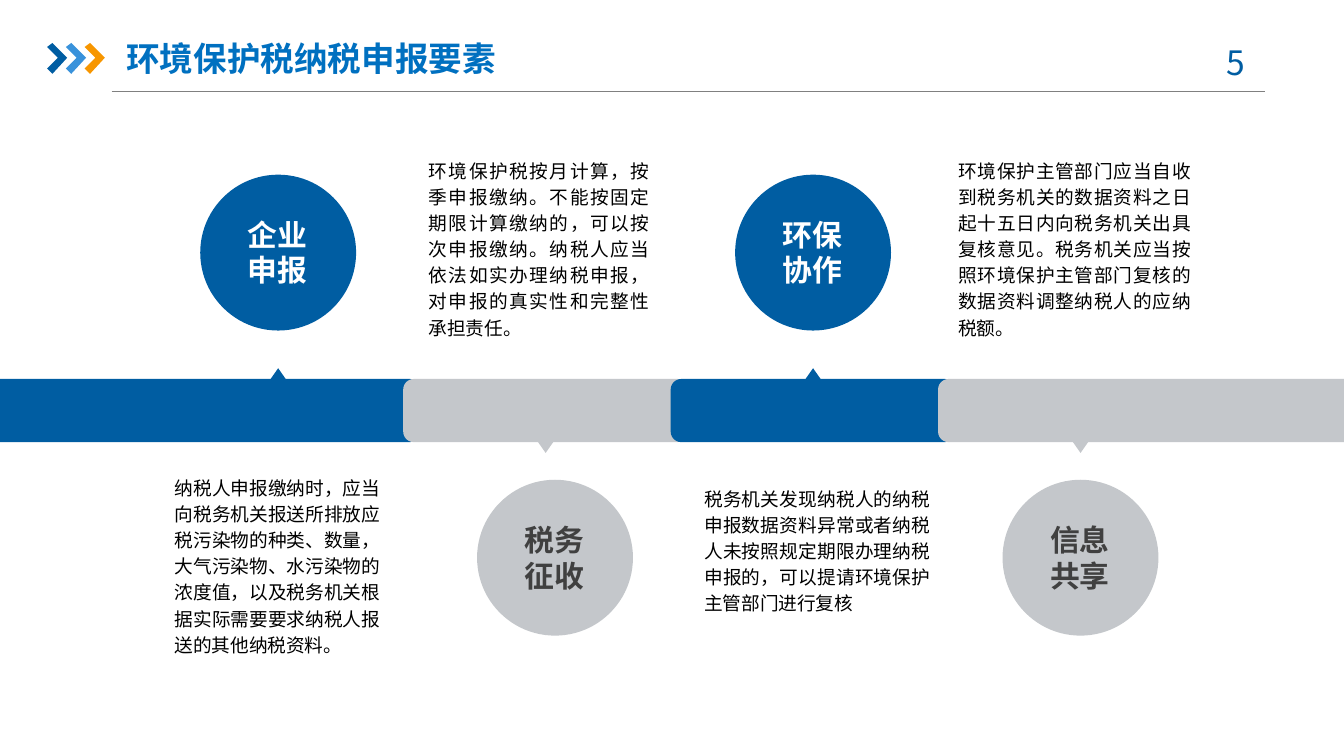
from lxml import etree
from pptx import Presentation
from pptx import util as u
from pptx.dml.color import RGBColor
from pptx.enum import shapes, text
from pptx.oxml.ns import qn

BLUE = RGBColor(0x00, 0x5D, 0xA2)
SKY = RGBColor(0x39, 0x92, 0xDB)
ORANGE = RGBColor(0xF7, 0x96, 0x00)
TITLE_BLUE = RGBColor(0x00, 0x70, 0xC0)
SILVER = RGBColor(0xC4, 0xC7, 0xCB)
RULE_GRAY = RGBColor(0x80, 0x80, 0x80)
DARK = RGBColor(0x40, 0x40, 0x40)
WHITE = RGBColor(0xFF, 0xFF, 0xFF)
BLACK = RGBColor(0x00, 0x00, 0x00)
HEADING_FONT = "Noto Sans CJK SC"
BODY_FONT = "Calibri"


def paint(shape, color):
    shape.shadow.inherit = False
    shape.fill.solid()
    shape.fill.fore_color.rgb = color
    shape.line.fill.background()


def write(shape, wording, size, color, align, font=HEADING_FONT, bold=False, inset=(0, 0)):
    frame = shape.text_frame
    frame.word_wrap = True
    frame.margin_left = frame.margin_right = u.Inches(inset[0])
    frame.margin_top = frame.margin_bottom = u.Inches(inset[1])
    paragraph = frame.paragraphs[0]
    paragraph.alignment = align
    run = paragraph.add_run()
    run.text = wording
    run.font.size = u.Pt(size)
    run.font.bold = bold
    run.font.color.rgb = color
    run.font.name = font
    east_asian = etree.SubElement(run.font._element, qn("a:ea"))
    east_asian.set("typeface", HEADING_FONT)
    return paragraph


prs = Presentation()
prs.slide_width = u.Inches(10)
prs.slide_height = u.Inches(10 * 9 / 16)
slide = prs.slides.add_slide(prs.slide_layouts[5])
canvas = slide.shapes

title = canvas.title
title.left, title.top = u.Inches(0.94), u.Inches(0.22)
title.width, title.height = u.Inches(3.12), u.Inches(0.42)
title.text_frame.vertical_anchor = text.MSO_ANCHOR.MIDDLE
title.text_frame.auto_size = text.MSO_AUTO_SIZE.NONE
write(title, "环境保护税纳税申报要素", 18, TITLE_BLUE, text.PP_ALIGN.LEFT, bold=True, inset=(0, 0.05))

header_rule = canvas.add_connector(
    shapes.MSO_CONNECTOR.STRAIGHT, u.Inches(0.83), u.Inches(0.68), u.Inches(9.41), u.Inches(0.68))
header_rule.line.color.rgb = RULE_GRAY
header_rule.line.width = u.Pt(0.75)
etree.SubElement(header_rule._element.spPr, qn("a:effectLst"))

chevron_outline = [(0, 0.03), (0.04, 0), (0.15, 0.11), (0.04, 0.23), (0, 0.19), (0.08, 0.11)]
for i, color in enumerate([BLUE, SKY, ORANGE]):
    points = [(u.Inches(0.35 + 0.14 * i + x), u.Inches(0.32 + y)) for x, y in chevron_outline]
    outline = canvas.build_freeform(*points[0])
    outline.add_line_segments(points[1:], close=True)
    paint(outline.convert_to_shape(), color)

page_number = canvas.add_textbox(u.Inches(8.86), u.Inches(0.26), u.Inches(0.73), u.Inches(0.4))
write(page_number, "5 ", 18, BLUE, text.PP_ALIGN.CENTER, inset=(0.1, 0.05))

stages = [
    ("企业申报", -0.12, 3.13, 1.49),
    ("税务征收", 3, 5.12, 3.55),
    ("环保协作", 4.99, 7.11, 5.47),
    ("信息共享", 6.98, 10.12, 7.46),
]
for i, (label, start, end, circle_left) in enumerate(stages):
    above = i % 2 == 0
    color, label_color = (BLUE, WHITE) if above else (SILVER, DARK)
    circle_top = 1.3 if above else 3.57

    band = canvas.add_shape(shapes.MSO_SHAPE.ROUNDED_RECTANGLE, u.Inches(start), u.Inches(2.82),
                            u.Inches(end - start), u.Inches(0.47))
    paint(band, color)

    pointer = canvas.add_shape(shapes.MSO_SHAPE.ISOSCELES_TRIANGLE, u.Inches(2 + 1.99 * i),
                               u.Inches(2.74 if above else 3.27), u.Inches(0.14), u.Inches(0.1))
    pointer.rotation = 0 if above else 180
    paint(pointer, color)

    circle = canvas.add_shape(shapes.MSO_SHAPE.OVAL, u.Inches(circle_left), u.Inches(circle_top),
                              u.Inches(1.16), u.Inches(1.16))
    paint(circle, color)

    caption = canvas.add_textbox(u.Inches(circle_left + 0.27), u.Inches(circle_top + 0.31),
                                 u.Inches(0.61), u.Inches(0.54))
    write(caption, label, 16, label_color, text.PP_ALIGN.CENTER, bold=True)

details = [
    (1.3, 3.52, 1.53, 1.37, "纳税人申报缴纳时，应当向税务机关报送所排放应税污染物的种类、数量，"
     "大气污染物、水污染物的浓度值，以及税务机关根据实际需要要求纳税人报送的其他纳税资料。"),
    (3.19, 1.16, 1.64, 1.37, "环境保护税按月计算，按季申报缴纳。不能按固定期限计算缴纳的，可以按次申报缴纳。"
     "纳税人应当依法如实办理纳税申报，对申报的真实性和完整性承担责任。"),
    (5.24, 3.6, 1.68, 0.98, "税务机关发现纳税人的纳税申报数据资料异常或者纳税人未按照规定期限办理纳税申报的，"
     "可以提请环境保护主管部门进行复核"),
    (7.13, 1.16, 1.73, 1.37, "环境保护主管部门应当自收到税务机关的数据资料之日起十五日内向税务机关出具复核意见。"
     "税务机关应当按照环境保护主管部门复核的数据资料调整纳税人的应纳税额。"),
]
for left, top, width, height, wording in details:
    detail = canvas.add_textbox(u.Inches(left), u.Inches(top), u.Inches(width), u.Inches(height))
    paragraph = write(detail, wording, 10, BLACK, text.PP_ALIGN.JUSTIFY, font=BODY_FONT)
    paragraph.line_spacing = u.Pt(14)

prs.save("out.pptx")
